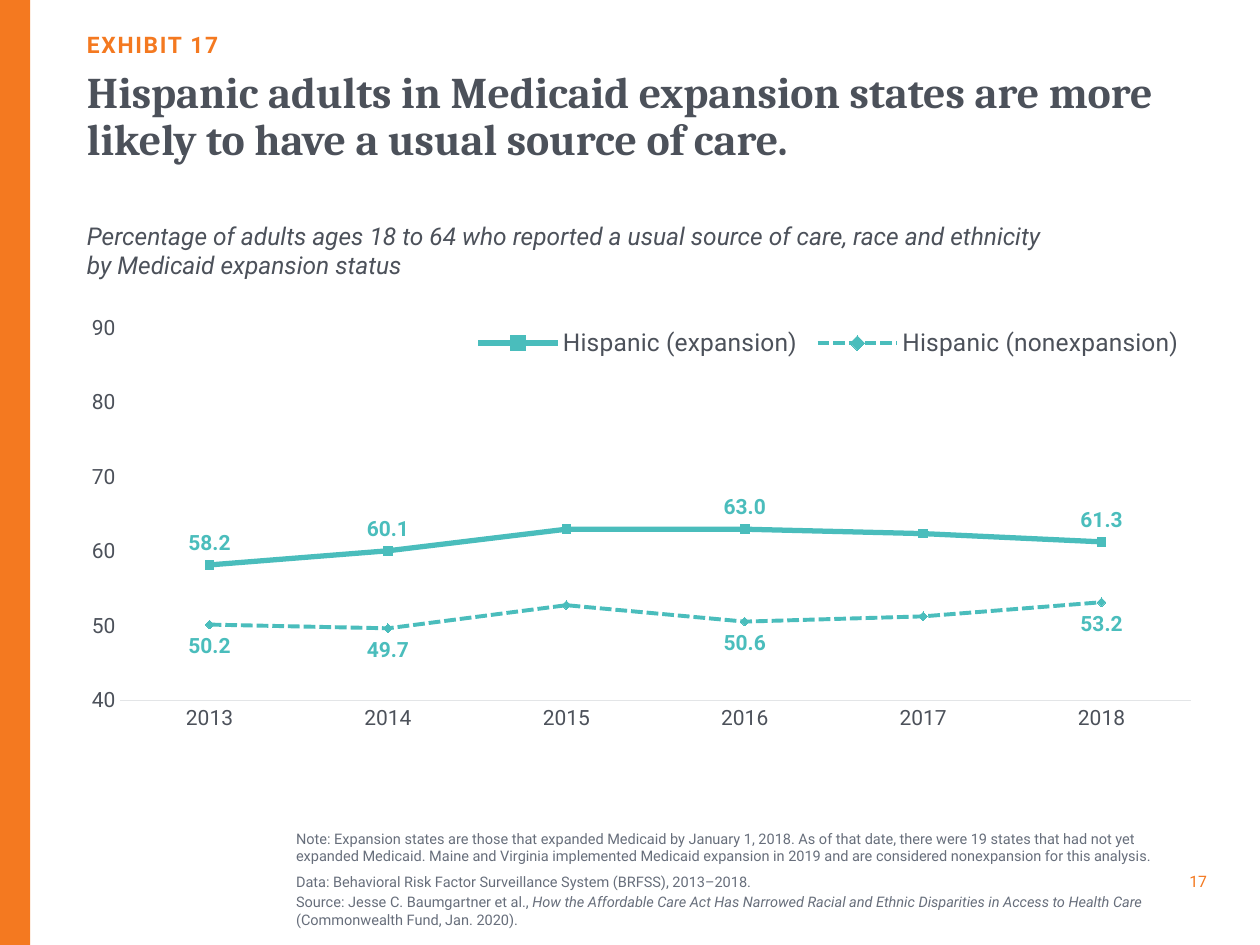
from lxml.etree import SubElement
from pptx import Presentation
from pptx.chart.data import CategoryChartData
from pptx.dml.color import RGBColor
from pptx.enum.chart import XL_CHART_TYPE, XL_LABEL_POSITION, XL_LEGEND_POSITION, XL_TICK_MARK
from pptx.enum.dml import MSO_LINE
from pptx.enum.shapes import MSO_SHAPE
from pptx.enum.text import MSO_ANCHOR, MSO_AUTO_SIZE, PP_ALIGN
from pptx.oxml import parse_xml
from pptx.oxml.ns import nsdecls, qn
from pptx.util import Inches, Pt

ORANGE = RGBColor(0xF4, 0x79, 0x20)
DARK = RGBColor(0x4C, 0x51, 0x5A)
GRAY = RGBColor(0x67, 0x6E, 0x7B)
TEAL = RGBColor(0x4A, 0xBD, 0xBC)
AXIS_GRAY = RGBColor(0xE3, 0xE5, 0xE7)
LEFT, WIDTH = 0.69, 8.85


class ExhibitSlide:
    """Holds the slide and the style shared by its elements."""

    heading_font = "Cambria"
    body_font = "Roboto"

    def __init__(self, presentation):
        self.slide = presentation.slides.add_slide(presentation.slide_layouts[0])

    def style(self, font, size, color, bold=None, italic=None, name=None):
        font.name = name or self.body_font
        font.size = Pt(size)
        font.color.rgb = color
        font.bold, font.italic = bold, italic

    def bar(self, left, top, width, height, color):
        shape = self.slide.shapes.add_shape(
            MSO_SHAPE.RECTANGLE, Inches(left), Inches(top), Inches(width), Inches(height))
        shape.shadow.inherit = False
        shape.fill.solid()
        shape.fill.fore_color.rgb = color
        shape.line.fill.background()

    def text(self, box, paragraphs, size, color, placeholder=None, anchor=MSO_ANCHOR.MIDDLE,
             align=PP_ALIGN.LEFT, wrap=True, **font_style):
        """Fill a text box or placeholder; a paragraph is a list of (text, italic) runs or a string."""
        left, top, width, height = map(Inches, box)
        shape = placeholder or self.slide.shapes.add_textbox(left, top, width, height)
        shape.left, shape.top, shape.width, shape.height = left, top, width, height
        frame = shape.text_frame
        frame.margin_left = frame.margin_top = frame.margin_right = frame.margin_bottom = 0
        frame.auto_size = MSO_AUTO_SIZE.NONE
        frame.word_wrap = wrap
        frame.vertical_anchor = anchor
        for index, content in enumerate(paragraphs):
            paragraph = frame.add_paragraph() if index else frame.paragraphs[0]
            paragraph.alignment = align
            paragraph.space_before = Pt(0)
            if isinstance(content, str):
                paragraph.text = content
            else:
                for run_text, italic in content:
                    run = paragraph.add_run()
                    run.text = run_text
                    run.font.italic = italic
            for run in paragraph.runs:
                self.style(run.font, size, color, **{"italic": run.font.italic, **font_style})
        return frame

    def place(self, element, index, x, y, width, height, inner=False):
        """Give a plot area or legend a manual layout, in fractions of the chart."""
        for existing in element.findall(qn("c:layout")):
            element.remove(existing)
        layout = parse_xml(f"<c:layout {nsdecls('c')}><c:manualLayout/></c:layout>")
        settings = [("layoutTarget", "inner")] if inner else []
        settings += [("xMode", "edge"), ("yMode", "edge"),
                     ("x", x), ("y", y), ("w", width), ("h", height)]
        for tag, value in settings:
            SubElement(layout[0], qn(f"c:{tag}")).set("val", str(value))
        element.insert(index, layout)

    def axis(self, axis):
        axis.major_tick_mark = axis.minor_tick_mark = XL_TICK_MARK.NONE
        axis.has_major_gridlines = False
        self.style(axis.tick_labels.font, 12, DARK)

    def series(self, series, width, dash, position, unlabeled):
        series.smooth = False
        series.marker.style = None
        series.format.line.color.rgb = TEAL
        series.format.line.width = Pt(width)
        if dash:
            series.format.line.dash_style = dash
        labels = series.data_labels
        labels.show_value = True
        labels.number_format = "#,##0.0"
        labels.number_format_is_linked = False
        labels.position = position
        self.style(labels.font, 12, TEAL, bold=True)
        # Hide the labels of the points that carry none
        for order, point in enumerate(unlabeled):
            hidden = parse_xml(f'<c:dLbl {nsdecls("c")}><c:idx val="{point}"/>'
                               '<c:delete val="1"/></c:dLbl>')
            series._element.find(qn("c:dLbls")).insert(order, hidden)

    def line_chart(self, box, categories, lines):
        data = CategoryChartData()
        data.categories = categories
        for name, values, *_ in lines:
            data.add_series(name, values)
        chart = self.slide.shapes.add_chart(XL_CHART_TYPE.LINE, *map(Inches, box), data).chart
        self.style(chart.font, 10, DARK)
        chart.has_title = False
        chart.plots[0].vary_by_categories = False

        # Axes
        self.axis(chart.category_axis)
        chart.category_axis.format.line.color.rgb = AXIS_GRAY
        chart.category_axis.format.line.width = Pt(0.75)
        value_axis = chart.value_axis
        self.axis(value_axis)
        value_axis.format.line.fill.background()
        value_axis.minimum_scale, value_axis.maximum_scale = 40, 90
        value_axis.major_unit = 10
        value_axis.tick_labels.number_format = "0"
        value_axis.tick_labels.number_format_is_linked = False

        # Legend at the top right, over the plot
        chart.has_legend = True
        chart.legend.position = XL_LEGEND_POSITION.BOTTOM
        chart.legend.include_in_layout = False
        self.style(chart.legend.font, 14, DARK)
        self.place(chart.legend._element, 1, 0.34, 0.02, 0.65, 0.09)
        plot_area = chart._chartSpace.chart.plotArea
        self.place(plot_area, 0, 0.03, 0.03, 0.96, 0.86, inner=True)

        for series, (_, _, *line_style) in zip(chart.plots[0].series, lines):
            self.series(series, *line_style, unlabeled=(2, 4))


def main():
    presentation = Presentation()
    presentation.slide_width, presentation.slide_height = Inches(10), Inches(7.5)
    exhibit = ExhibitSlide(presentation)
    title, subtitle = exhibit.slide.placeholders

    # Side bar and page number
    exhibit.bar(0, 0, 0.24, 7.5, ORANGE)
    exhibit.text((9.27, 6.88, 0.31, 0.22), ["17"], 9, ORANGE, align=PP_ALIGN.RIGHT, wrap=False)

    # Headings
    label = exhibit.text((LEFT, 0.19, WIDTH, 0.27), ["EXHIBIT 17"], 13, ORANGE, subtitle,
                         MSO_ANCHOR.BOTTOM, bold=True)
    label.paragraphs[0].runs[0].font._element.set("spc", "100")
    heading = exhibit.text(
        (LEFT, 0.56, WIDTH, 1.3),
        ["Hispanic adults in Medicaid expansion states are more likely to have "
         "a usual source of care."],
        25, DARK, title, MSO_ANCHOR.TOP, bold=True, name=exhibit.heading_font)
    heading.paragraphs[0].line_spacing = 0.9
    exhibit.text(
        (LEFT, 1.75, 8.13, 0.47),
        ["Percentage of adults ages 18 to 64 who reported a usual source of care, "
         "race and ethnicity", "by Medicaid expansion status"],
        14, DARK, wrap=False, italic=True)

    # Chart
    exhibit.line_chart(
        (LEFT, 2.5, WIDTH, 3.44),
        [str(year) for year in range(2013, 2019)],
        [("Hispanic (expansion)", (58.2, 60.1, 63, 63, 62.4, 61.3),
          3, None, XL_LABEL_POSITION.ABOVE),
         ("Hispanic (nonexpansion)", (50.2, 49.7, 52.8, 50.6, 51.3, 53.2),
          2.25, MSO_LINE.SQUARE_DOT, XL_LABEL_POSITION.BELOW)])

    # Notes and source
    notes = exhibit.text(
        (2.35, 6.55, 6.92, 0.85),
        ["Note: Expansion states are those that expanded Medicaid by January 1, 2018. As of that "
         "date, there were 19 states that had not yet expanded Medicaid. Maine and Virginia "
         "implemented Medicaid expansion in 2019 and are considered nonexpansion for this analysis.",
         "Data: Behavioral Risk Factor Surveillance System (BRFSS), 2013–2018.",
         [("Source: Jesse C. Baumgartner et al., ", False),
          ("How the Affordable Care Act Has Narrowed Racial and Ethnic Disparities in Access "
           "to Health Care ", True),
          ("(Commonwealth Fund, Jan. 2020).", False)]],
        8.3, GRAY)
    notes.paragraphs[0].space_after = Pt(3)
    for paragraph in notes.paragraphs[1:]:
        paragraph.space_before = Pt(1.66)

    presentation.save("out.pptx")


if __name__ == "__main__":
    main()
